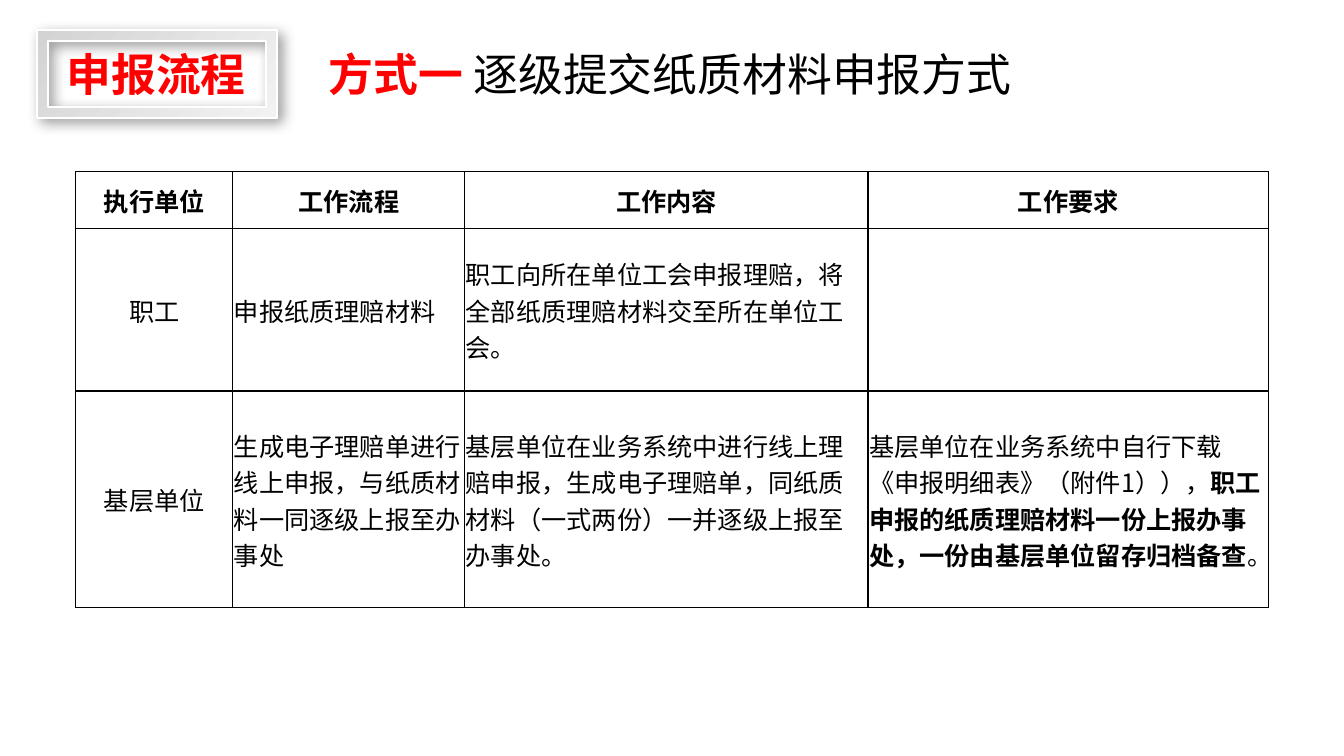
from lxml import etree
from pptx import Presentation
from pptx.dml.color import RGBColor
from pptx.enum.shapes import MSO_SHAPE
from pptx.enum.text import MSO_ANCHOR, MSO_AUTO_SIZE, PP_ALIGN
from pptx.oxml import parse_xml
from pptx.oxml.ns import nsdecls, qn
from pptx.util import Inches, Pt

COLORS = {
    "red": "FF0000",
    "black": "000000",
    "white": "FFFFFF",
    "frame_dark": "D3D3D3",
    "frame_light": "F2F2F2",
}
CJK = "Noto Sans CJK SC"
COL_WIDTHS = [1.56, 2.3, 4, 3.97]
ROW_HEIGHTS = [0.57, 1.61, 2.15]
ROWS = [
    ["执行单位", "工作流程", "工作内容", "工作要求"],
    ["职工", "申报纸质理赔材料",
     "职工向所在单位工会申报理赔，将全部纸质理赔材料交至所在单位工会。", ""],
    ["基层单位", "生成电子理赔单进行线上申报，与纸质材料一同逐级上报至办事处",
     "基层单位在业务系统中进行线上理赔申报，生成电子理赔单，同纸质材料（一式两份）一并逐级上报至办事处。",
     [("基层单位在业务系统中自行下载《申报明细表》（附件1）），", False),
      ("职工申报的纸质理赔材料一份上报办事处，一份由基层单位留存归档备查", True),
      ("。", False)]],
]


def rgb(name):
    return RGBColor.from_string(COLORS[name])


def add_run(p, text, size, color="black", bold=False, font=CJK):
    r = p.add_run()
    r.text = text
    r.font.size = Pt(size)
    r.font.bold = bold
    r.font.name = font
    r.font.color.rgb = rgb(color)
    ea = etree.SubElement(r.font._element, qn("a:ea"))
    ea.set("typeface", CJK)


def add_heading(slide, left, top, width, height, indent=0.1):
    tb = slide.shapes.add_textbox(Inches(left), Inches(top), Inches(width), Inches(height))
    tf = tb.text_frame
    tf.word_wrap = False
    tf.auto_size = MSO_AUTO_SIZE.SHAPE_TO_FIT_TEXT
    tf.margin_left = Inches(indent)
    return tf.paragraphs[0]


def add_badge(slide, left, top, width, height):
    sp = slide.shapes.add_shape(MSO_SHAPE.FRAME, Inches(left), Inches(top),
                                Inches(width), Inches(height))
    sp.fill.gradient()
    sp.fill.gradient_angle = 315
    for stop, name, pos in zip(sp.fill.gradient_stops, ("frame_dark", "frame_light"), (0, 1)):
        stop.color.rgb = rgb(name)
        stop.position = pos
    sp.line.color.rgb = rgb("white")
    sp.line.width = Pt(1.5)
    sp.shadow.inherit = False
    sp._element.spPr.find(qn("a:effectLst")).append(parse_xml(
        f'<a:outerShdw {nsdecls("a")} blurRad="{Pt(10)}" dist="{Pt(4)}" dir="2700000" '
        f'algn="tl" rotWithShape="0"><a:srgbClr val="{COLORS["black"]}">'
        '<a:alpha val="40000"/></a:srgbClr></a:outerShdw>'))
    p = add_heading(slide, left + 0.19, top + 0.11, width - 0.39, 0.64)
    add_run(p, "申报流程", 32, "red", True)


def add_title(slide, left, top, width, height):
    p = add_heading(slide, left, top, width, height, indent=0.3)
    add_run(p, "方式一 ", 32, "red", True)
    add_run(p, "逐级提交纸质材料申报方式", 32, font="Arial")


def style_cell(cell):
    cell.fill.solid()
    cell.fill.fore_color.rgb = rgb("white")
    cell.vertical_anchor = MSO_ANCHOR.MIDDLE
    cell.margin_left = cell.margin_right = cell.margin_top = Inches(0.01)
    cell.margin_bottom = 0
    tcPr = cell._tc.get_or_add_tcPr()
    for i, side in enumerate(("lnL", "lnR", "lnT", "lnB")):
        tcPr.insert(i, parse_xml(
            f'<a:{side} {nsdecls("a")} w="{Pt(1)}"><a:solidFill>'
            f'<a:srgbClr val="{COLORS["black"]}"/></a:solidFill></a:{side}>'))


def add_process_table(slide, left, top, width, height):
    table = slide.shapes.add_table(len(ROWS), len(COL_WIDTHS), Inches(left), Inches(top),
                                   Inches(width), Inches(height)).table
    table.first_row = table.horz_banding = False
    for col, w in zip(table.columns, COL_WIDTHS):
        col.width = Inches(w)
    for row, h in zip(table.rows, ROW_HEIGHTS):
        row.height = Inches(h)
    for i, texts in enumerate(ROWS):
        for j, content in enumerate(texts):
            cell = table.cell(i, j)
            style_cell(cell)
            if not content:
                continue
            p = cell.text_frame.paragraphs[0]
            p.alignment = PP_ALIGN.CENTER if i == 0 or j == 0 else PP_ALIGN.LEFT
            parts = [(content, i == 0)] if isinstance(content, str) else content
            for text, bold in parts:
                add_run(p, text, 18, bold=bold)


def main():
    prs = Presentation()
    prs.slide_width = Inches(13.33)
    prs.slide_height = Inches(7.5)
    slide = prs.slides.add_slide(prs.slide_layouts[6])
    add_badge(slide, 0.37, 0.3, 2.38, 0.87)
    add_title(slide, 2.96, 0.41, 7.55, 0.64)
    add_process_table(slide, 0.75, 1.7, sum(COL_WIDTHS), sum(ROW_HEIGHTS))
    prs.save("out.pptx")


if __name__ == "__main__":
    main()
